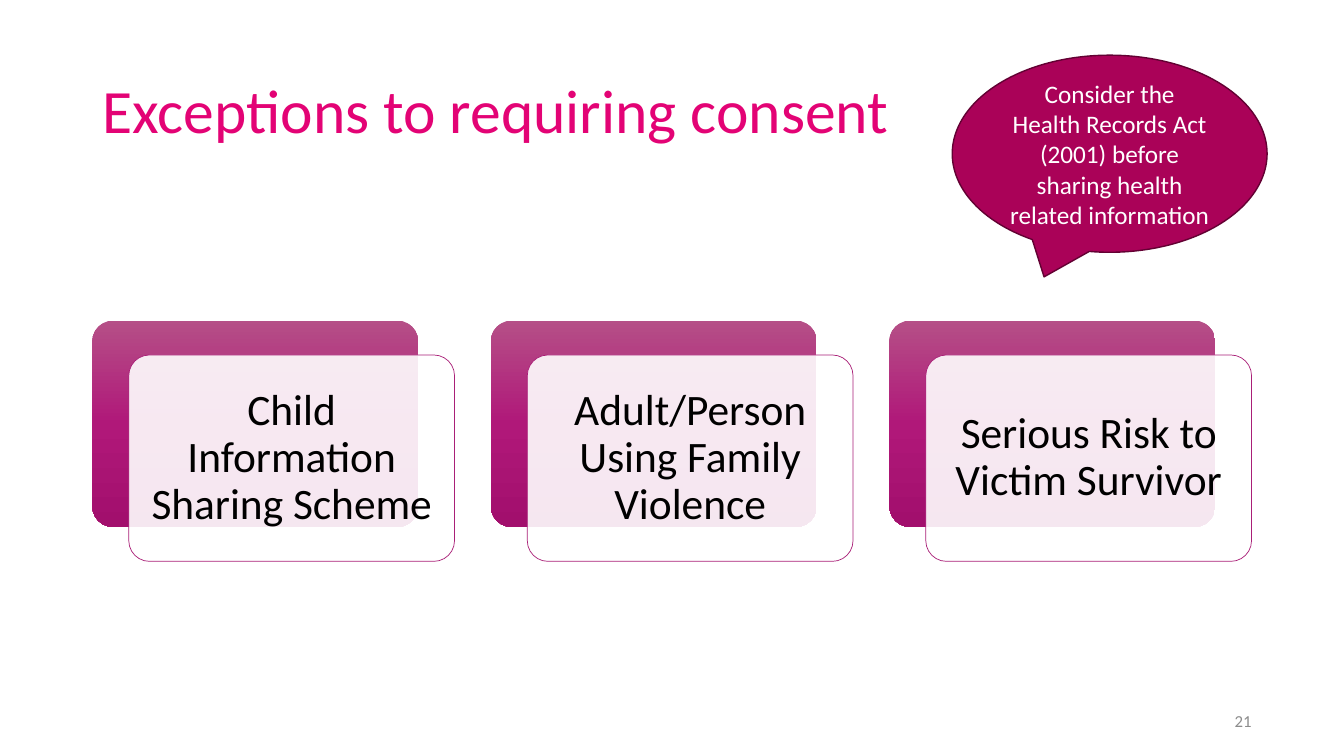
from collections import namedtuple
from copy import deepcopy
from dataclasses import dataclass

from lxml.etree import SubElement
from pptx import Presentation
from pptx.dml.color import RGBColor
from pptx.enum.shapes import MSO_SHAPE
from pptx.enum.text import MSO_ANCHOR, PP_ALIGN
from pptx.oxml.ns import qn
from pptx.util import Pt

Box = namedtuple("Box", "left top width height")


@dataclass(frozen=True)
class Theme:
    """Colours and type sizes of the slide."""
    font: str = "Calibri"
    title: str = "E30375"
    number: str = "8C8C8C"
    card_text: str = "000000"
    card_line: str = "A91F77"
    card_panel: str = "FFFFFF"
    card_gradient: tuple = ("B54F87", "B01879", "A20F6D")
    callout: str = "AA0258"
    callout_line: str = "630133"
    callout_text: str = "FFFFFF"
    title_size: float = 44
    card_size: float = 31
    callout_size: float = 18
    number_size: float = 12


THEME = Theme()


def points(box):
    """Return the box as lengths in points."""
    return [Pt(length) for length in box]


def write(shape, text, size, colour, align, spacing=1.0, inset=(7.2, 3.6)):
    """Set the wrapped, vertically centred text of a shape."""
    frame = shape.text_frame
    frame.word_wrap = True
    frame.vertical_anchor = MSO_ANCHOR.MIDDLE
    frame.margin_left = frame.margin_right = Pt(inset[0])
    frame.margin_top = frame.margin_bottom = Pt(inset[1])
    frame.text = text
    paragraph = frame.paragraphs[0]
    paragraph.alignment = align
    paragraph.line_spacing = spacing
    font = paragraph.runs[0].font
    font.name = THEME.font
    font.size = Pt(size)
    font.color.rgb = RGBColor.from_string(colour)


def add_preset(slide, preset, box, fill=None, line=None, line_width=1):
    """Add a shadowless preset shape with an optional fill and outline."""
    shape = slide.shapes.add_shape(preset, *points(box))
    shape.shadow.inherit = False
    if fill:
        shape.fill.solid()
        shape.fill.fore_color.rgb = RGBColor.from_string(fill)
    if line:
        shape.line.color.rgb = RGBColor.from_string(line)
        shape.line.width = Pt(line_width)
    else:
        shape.line.fill.background()
    return shape


def paint_gradient(shape, colours):
    """Fill a shape from top to bottom with evenly spaced colours."""
    shape.fill.gradient()
    shape.fill.gradient_angle = 270
    stop_list = shape.element.spPr.find(".//" + qn("a:gsLst"))
    while len(stop_list) < len(colours):
        stop_list.append(deepcopy(stop_list[0]))
    for index, (stop, colour) in enumerate(zip(shape.fill.gradient_stops, colours)):
        stop.position = index / (len(colours) - 1)
        stop.color.rgb = RGBColor.from_string(colour)


def add_title(slide, box, text):
    """Add the slide title."""
    title = slide.shapes.add_textbox(*points(box))
    write(title, text, THEME.title_size, THEME.title, PP_ALIGN.LEFT, 0.9)


def add_card(slide, box, shift, text):
    """Add a gradient card with a translucent text panel shifted over it."""
    width, height = box.width - shift[0], box.height - shift[1]
    back = add_preset(slide, MSO_SHAPE.ROUNDED_RECTANGLE,
                      Box(box.left, box.top, width, height))
    paint_gradient(back, THEME.card_gradient)
    panel = add_preset(slide, MSO_SHAPE.ROUNDED_RECTANGLE,
                       Box(box.left + shift[0], box.top + shift[1], width, height),
                       THEME.card_panel, THEME.card_line, 0.5)
    colour = panel.element.spPr.find(qn("a:solidFill"))[0]
    SubElement(colour, qn("a:alpha"), val="90000")
    back.adjustments[0] = panel.adjustments[0] = 0.1
    write(panel, text, THEME.card_size, THEME.card_text, PP_ALIGN.CENTER, 0.9, (9.3, 9.3))


def add_exceptions(slide, box, texts):
    """Spread the exception cards evenly over the box."""
    shift = (26, 24.6)
    gap = shift[0]
    width = (box.width - gap * (len(texts) - 1)) / len(texts)
    for index, text in enumerate(texts):
        left = box.left + index * (width + gap)
        add_card(slide, Box(left, box.top, width, box.height), shift, text)


def add_callout(slide, box, text):
    """Add the speech bubble."""
    callout = add_preset(slide, MSO_SHAPE.OVAL_CALLOUT, box,
                         THEME.callout, THEME.callout_line)
    write(callout, text, THEME.callout_size, THEME.callout_text, PP_ALIGN.CENTER)


def add_slide_number(slide, box, text):
    """Add the slide number at the right of the box."""
    number = slide.shapes.add_textbox(*points(box))
    write(number, text, THEME.number_size, THEME.number, PP_ALIGN.RIGHT, inset=(0, 3.6))


def main():
    """Build and save the slide."""
    presentation = Presentation()
    presentation.slide_width, presentation.slide_height = Pt(960), Pt(540)
    slide = presentation.slides.add_slide(presentation.slide_layouts[6])
    add_title(slide, Box(66, 28.8, 828, 104.4), "Exceptions to requiring consent")
    add_slide_number(slide, Box(678, 500.5, 216, 28.8), "21")
    add_exceptions(slide, Box(66, 229, 828, 172), [
        "Child Information Sharing Scheme",
        "Adult/Person Using Family Violence",
        "Serious Risk to Victim Survivor",
    ])
    add_callout(slide, Box(680.2, 39.4, 224.9, 140.8),
                "Consider the Health Records Act (2001) before sharing "
                "health related information")
    presentation.save("out.pptx")


if __name__ == "__main__":
    main()
